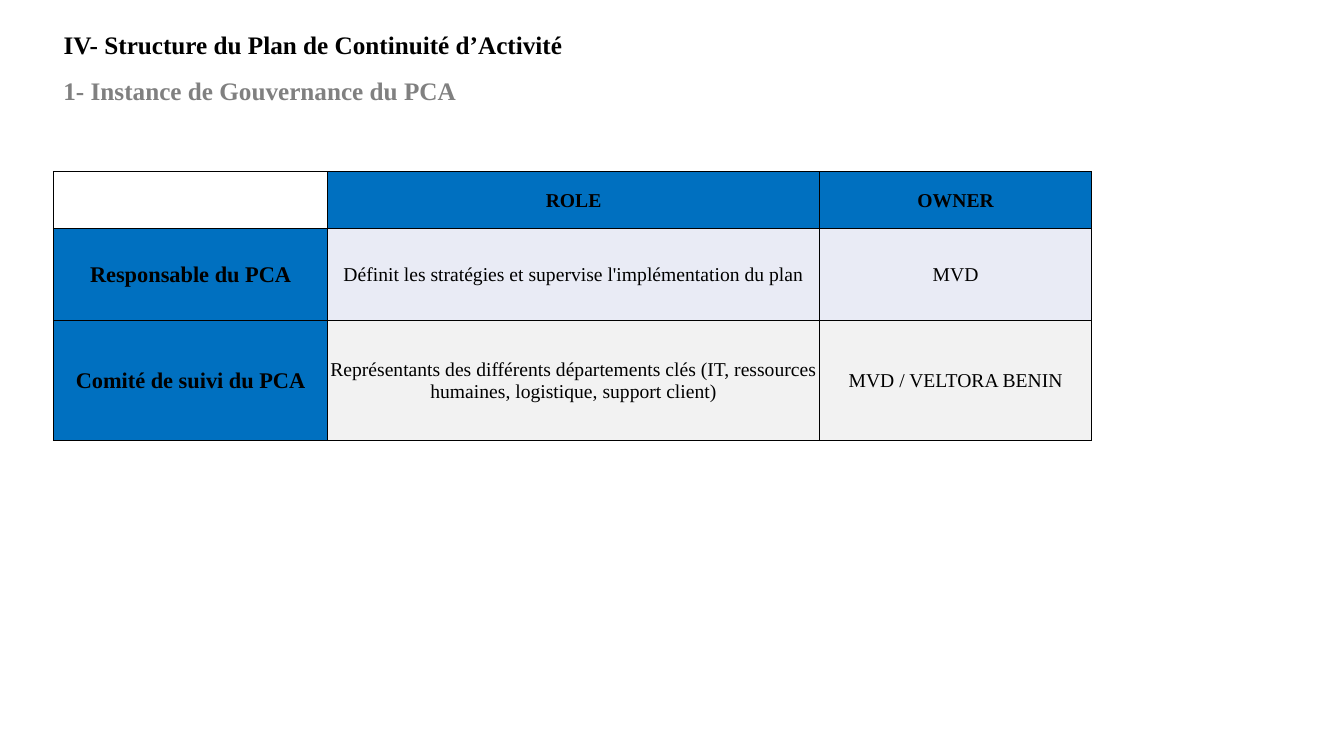
from lxml.etree import SubElement
from pptx import Presentation
from pptx.dml.color import RGBColor
from pptx.enum.text import MSO_ANCHOR, MSO_AUTO_SIZE, PP_ALIGN
from pptx.oxml.ns import qn
from pptx.util import Pt

COLORS = {
    "black": "000000",
    "gray": "808080",
    "blue": "0070C0",
    "lavender": "E9EBF5",
    "light": "F2F2F2",
}
LEFT = 38.2
HEADING_WIDTH = 418.3
HEADING_HEIGHT = 29.1
COLUMN_WIDTHS = [195.9, 351.3, 194.5]
ROW_HEIGHTS = [40.5, 65.6, 85.7]
ROWS = [
    ["", "ROLE", "OWNER"],
    [
        "Responsable du PCA",
        "Définit les stratégies et supervise l'implémentation du plan",
        "MVD",
    ],
    [
        "Comité de suivi du PCA",
        "Représentants des différents départements clés (IT, ressources humaines, logistique, support client)",
        "MVD / VELTORA BENIN",
    ],
]
ROW_FILLS = ["blue", "lavender", "light"]


def write_text(frame, text, size=18, color="black", bold=True, align=PP_ALIGN.LEFT):
    para = frame.paragraphs[0]
    para.alignment = align
    span = para.add_run()
    span.text = text
    span.font.name = "Times New Roman"
    span.font.size = Pt(size)
    span.font.bold = bold
    span.font.color.rgb = RGBColor.from_string(COLORS[color])


def add_borders(cell):
    properties = cell._tc.get_or_add_tcPr()
    for side in ("lnL", "lnR", "lnT", "lnB"):
        line = SubElement(properties, qn(f"a:{side}"), w=str(Pt(1)))
        fill = SubElement(line, qn("a:solidFill"))
        SubElement(fill, qn("a:srgbClr"), val=COLORS["black"])


deck = Presentation()
deck.slide_width = Pt(960)
deck.slide_height = Pt(540)
page = deck.slides.add_slide(deck.slide_layouts[5])

title = page.shapes.title
title.left, title.top = Pt(LEFT), Pt(17.3)
title.width, title.height = Pt(HEADING_WIDTH), Pt(HEADING_HEIGHT)
subtitle = page.shapes.add_textbox(
    Pt(LEFT), Pt(50.6), Pt(HEADING_WIDTH), Pt(HEADING_HEIGHT)
)
headings = [
    (title, "IV- Structure du Plan de Continuité d’Activité", "black"),
    (subtitle, "1- Instance de Gouvernance du PCA", "gray"),
]
for box, text, color in headings:
    box.text_frame.word_wrap = True
    box.text_frame.auto_size = MSO_AUTO_SIZE.SHAPE_TO_FIT_TEXT
    box.text_frame.vertical_anchor = MSO_ANCHOR.TOP
    write_text(box.text_frame, text, color=color)

table = page.shapes.add_table(
    len(ROWS),
    len(COLUMN_WIDTHS),
    Pt(LEFT),
    Pt(122.6),
    Pt(sum(COLUMN_WIDTHS)),
    Pt(sum(ROW_HEIGHTS)),
).table
table.first_row = False
table.horz_banding = False
for column, width in zip(table.columns, COLUMN_WIDTHS):
    column.width = Pt(width)
for row, height in zip(table.rows, ROW_HEIGHTS):
    row.height = Pt(height)

for row_index, texts in enumerate(ROWS):
    for column_index, text in enumerate(texts):
        cell = table.cell(row_index, column_index)
        add_borders(cell)
        if not text:
            cell.fill.background()
            continue
        is_label = column_index == 0
        cell.fill.solid()
        fill_name = "blue" if is_label else ROW_FILLS[row_index]
        cell.fill.fore_color.rgb = RGBColor.from_string(COLORS[fill_name])
        cell.vertical_anchor = MSO_ANCHOR.MIDDLE
        cell.margin_left = cell.margin_right = cell.margin_top = Pt(0.7)
        cell.margin_bottom = Pt(0)
        write_text(
            cell.text_frame,
            text,
            size=16 if is_label else 14,
            bold=is_label or row_index == 0,
            align=PP_ALIGN.CENTER,
        )

deck.save("out.pptx")
